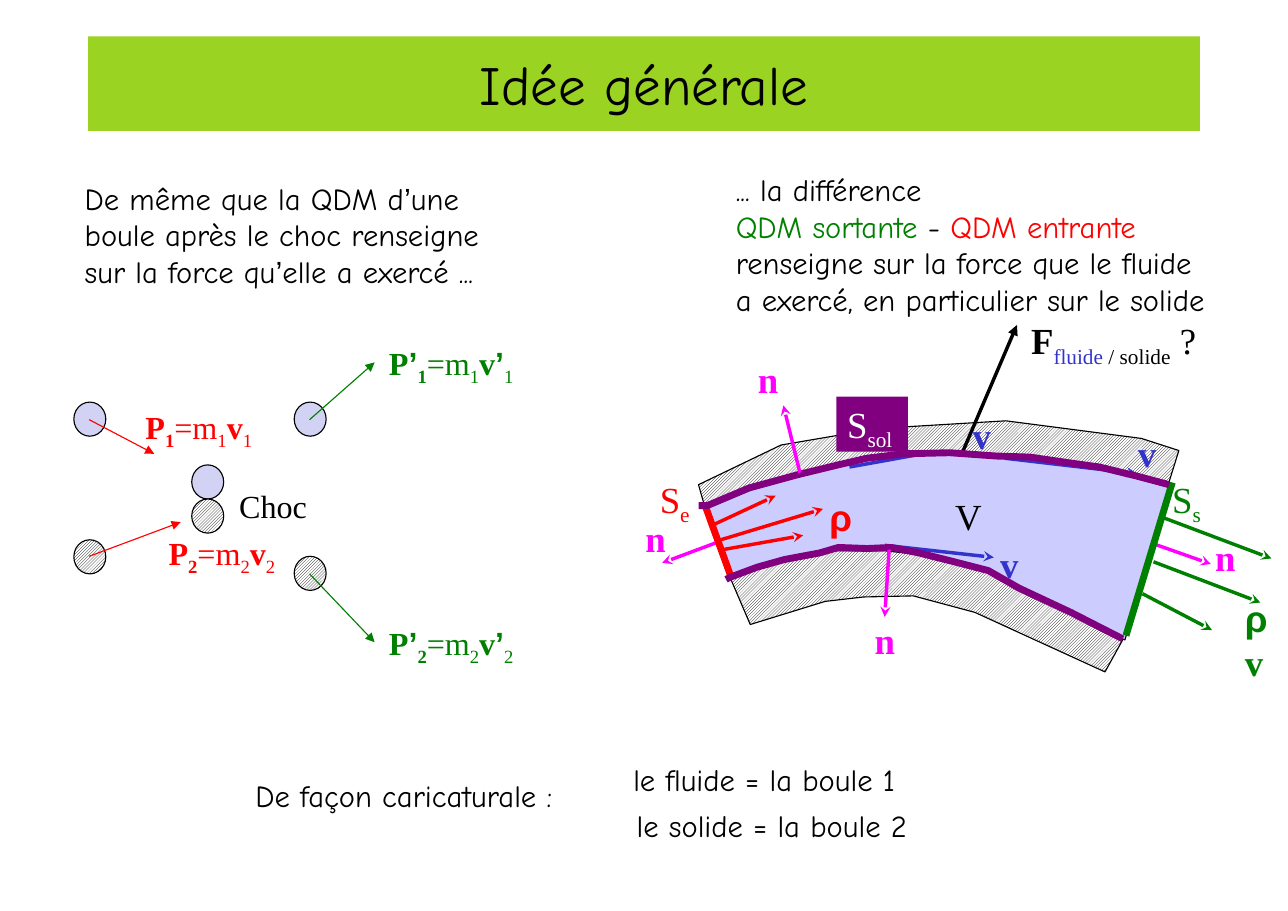
from dataclasses import dataclass

from lxml.etree import SubElement
from pptx import Presentation
from pptx.dml.color import RGBColor as Rgb
from pptx.enum.dml import MSO_PATTERN as Pattern
from pptx.enum.shapes import MSO_CONNECTOR as Connector, MSO_SHAPE as Shape
from pptx.enum.text import MSO_ANCHOR as Anchor, PP_ALIGN as Align
from pptx.oxml.ns import qn
from pptx.util import Inches, Pt

COLUMNS, ROWS = 11.69, 8.27


@dataclass(frozen=True)
class Theme:
    """Colours, fonts and sizes of the slide."""
    banner: str = "9AD322"
    black: str = "000000"
    white: str = "FFFFFF"
    fluid: str = "CCCCFF"
    ball: str = "D2D2F4"
    red: str = "FF0000"
    green: str = "008000"
    blue: str = "3333CC"
    pink: str = "FF00FF"
    purple: str = "800080"
    hand: str = "Comic Neue"
    serif: str = "Times New Roman"
    symbol: str = "Arial"
    title: float = 36
    body: float = 20
    momentum: float = 21
    label: float = 24
    thin: float = 0.75
    medium: float = 2.25
    thick: float = 4.5


THEME = Theme()


@dataclass
class Box:
    """A region of the slide, whose parts are placed in grid cells."""
    shapes: object
    left: float
    top: float

    def point(self, column, row):
        """Turn a cell position in the box into slide lengths."""
        return Inches(self.left + column), Inches(self.top + row)


def paint(shape, fill=None, line=None, weight=THEME.thin):
    """Fill and outline a shape; the fill "hatch" gives diagonal strokes."""
    shape.shadow.inherit = False
    if fill == "hatch":
        shape.fill.patterned()
        shape.fill.pattern = Pattern.LIGHT_UPWARD_DIAGONAL
        shape.fill.fore_color.rgb = Rgb.from_string(THEME.black)
        shape.fill.back_color.rgb = Rgb.from_string(THEME.white)
    elif fill:
        shape.fill.solid()
        shape.fill.fore_color.rgb = Rgb.from_string(fill)
    else:
        shape.fill.background()
    if line:
        shape.line.color.rgb = Rgb.from_string(line)
        shape.line.width = Pt(weight)
    else:
        shape.line.fill.background()


def preset(box, kind, column, row, width, height, fill, line=None):
    """Draw a painted preset shape."""
    shape = box.shapes.add_shape(kind, *box.point(column, row), Inches(width), Inches(height))
    paint(shape, fill, line)
    return shape


def outline(box, points, fill=None, line=THEME.black, weight=THEME.thin):
    """Draw a freeform, closed when it is filled."""
    start, *rest = [box.point(*point) for point in points]
    builder = box.shapes.build_freeform(*start)
    builder.add_line_segments(rest, close=bool(fill))
    paint(builder.convert_to_shape(), fill, line, weight)


def arrow(box, start, end, color, weight=THEME.medium, tip="stealth"):
    """Draw a straight line with an optional tip."""
    line = box.shapes.add_connector(Connector.STRAIGHT, *box.point(*start), *box.point(*end))
    line.line.color.rgb = Rgb.from_string(color)
    line.line.width = Pt(weight)
    if tip:
        SubElement(line.line._get_or_add_ln(), qn("a:tailEnd"), type=tip)
    SubElement(line._element.spPr, qn("a:effectLst"))


def write(frame, paragraphs, size, font, margins=(0.1, 0.05), align=Align.LEFT):
    """Write paragraphs of (text, colour, style) runs; style b is bold, s subscript."""
    frame.word_wrap = True
    frame.vertical_anchor = Anchor.TOP
    frame.margin_left = frame.margin_right = Inches(margins[0])
    frame.margin_top = frame.margin_bottom = Inches(margins[1])
    for index, runs in enumerate(paragraphs):
        para = frame.add_paragraph() if index else frame.paragraphs[0]
        para.alignment = align
        for text, color, style in runs:
            if text == "\n":
                para.add_line_break()
                continue
            span = para.add_run()
            span.text = text
            span.font.size = Pt(size)
            span.font.name = THEME.symbol if text in "’ρ" else font
            span.font.bold = "b" in style
            span.font.color.rgb = Rgb.from_string(color)
            if "s" in style:
                span.font._element.set("baseline", "-25000")


def label(box, column, row, width, runs, size=THEME.label, font=THEME.serif, margins=(0.1, 0.05)):
    """Place a one-paragraph text box."""
    text = box.shapes.add_textbox(*box.point(column, row), Inches(width), Inches(0.5))
    write(text.text_frame, [runs], size, font, margins)


def banner(box):
    """Draw the title band."""
    band = preset(box, Shape.RECTANGLE, 0, 0, 10.09, 0.86, THEME.banner)
    write(band.text_frame, [[("Idée générale", THEME.black, "")]], THEME.title, THEME.hand, (0, 0), Align.CENTER)
    band.text_frame.vertical_anchor = Anchor.MIDDLE


def statement(box, width, height, *paragraphs):
    """Write a handwritten statement, one list of (text, colour) runs per paragraph."""
    text = box.shapes.add_textbox(*box.point(0, 0), Inches(width), Inches(height))
    styled = [[(words, color, "") for words, color in runs] for runs in paragraphs]
    write(text.text_frame, styled, THEME.body, THEME.hand)


def momentum(index, color, prime=False):
    """Give the runs of a momentum formula."""
    mark = [("’", color, "b")] if prime else []
    return [("P", color, "b"), *mark, (index, color, "bs"), ("=m", color, ""), (index, color, "s"),
            ("v", color, "b"), *mark, (index, color, "s")]


def collision(box):
    """Draw the two balls before, during and after the shock."""
    rows = ((THEME.ball, (0.65, 1.22, 0.65)), ("hatch", (1.9, 1.53, 2.05)))
    for fill, tops in rows:
        for column, top in zip((0.67, 1.74, 2.67), tops):
            preset(box, Shape.OVAL, column, top, 0.29, 0.31, fill, THEME.black)
    flights = (((0.81, 0.81), (1.4, 1.12), THEME.red), ((0.81, 2.05), (1.64, 1.74), THEME.red),
               ((2.81, 0.81), (3.4, 0.29), THEME.green), ((2.81, 2.21), (3.4, 2.83), THEME.green))
    for start, end, color in flights:
        arrow(box, start, end, color, THEME.thin, "triangle")
    formulas = ((1.24, 0.66, momentum("1", THEME.red)), (1.45, 1.8, momentum("2", THEME.red)),
                (3.45, 0.08, momentum("1", THEME.green, True)), (3.45, 2.62, momentum("2", THEME.green, True)),
                (2.09, 1.38, [("Choc", THEME.black, "")]))
    for column, row, runs in formulas:
        label(box, column, row, 1.45, runs, THEME.momentum, margins=(0.08, 0.04))


def section(box, edge, normal, speeds, name, name_at, normal_at, flux_at, color):
    """Draw an inlet or outlet section with its normal and velocities."""
    arrow(box, *normal, THEME.pink)
    for speed in speeds:
        arrow(box, *speed, color)
    arrow(box, *edge, color, THEME.thick, None)
    label(box, *normal_at, 0.39, [("n", THEME.pink, "b")])
    label(box, *flux_at, 0.55, [("ρ", color, "b"), ("v", color, "b")])
    label(box, *name_at, 0.5, [("S", color, ""), (name, color, "s")])


def pipe(box):
    """Draw the bent pipe, its walls, sections, velocities and force."""
    outline(box, ((1.39, 2.62), (1.82, 2.43), (2.3, 2.3), (2.85, 2.18), (3.33, 2.11), (3.75, 2.11),
                  (4.48, 2.18), (4.96, 2.24), (5.63, 2.43), (5.21, 3.81), (4.84, 3.63), (4.42, 3.44),
                  (3.94, 3.18), (3.51, 3.06), (3.03, 3), (2.54, 3), (2, 3.12), (1.64, 3.25)), THEME.fluid)
    label(box, 3.57, 2.43, 0.44, [("V", THEME.black, "")])
    section(box, ((5.64, 2.38), (5.22, 3.77)), ((5.45, 2.93), (5.99, 3.12)),
            (((5.47, 3.1), (6.44, 3.47)), ((5.37, 3.39), (6, 3.72)), ((5.56, 2.7), (6.54, 3.07))),
            "s", (5.54, 2.28), (5.93, 2.81), (6.2, 3.36), THEME.green)
    section(box, ((1.4, 2.59), (1.64, 3.25)), ((1.52, 2.92), (1.01, 3.11)),
            (((1.51, 2.91), (2.47, 2.62)), ((1.56, 2.99), (2.29, 2.86)), ((1.44, 2.78), (2.04, 2.5))),
            "e", (0.89, 2.28), (0.76, 2.63), (2.43, 2.44), THEME.red)
    arrow(box, (2.71, 2.24), (3.71, 2.06), THEME.blue)
    outline(box, ((1.4, 2.61), (1.34, 2.4), (2.09, 2.04), (2.97, 1.89), (4.13, 1.82), (5.36, 1.98),
                  (5.7, 2.09), (5.6, 2.41), (5.28, 2.32), (4.71, 2.2), (4.21, 2.14), (3.73, 2.12),
                  (3.47, 2.12), (2.93, 2.16), (2.47, 2.27), (2, 2.38), (1.82, 2.43)), "hatch")
    outline(box, ((1.63, 3.25), (1.86, 3.16), (2.03, 3.11), (2.52, 3), (3.03, 3), (3.3, 3.03), (3.5, 3.06),
                  (3.93, 3.18), (5.19, 3.81), (5.03, 4.1), (4.33, 3.78), (3.85, 3.56), (3.29, 3.41),
                  (2.84, 3.42), (2.49, 3.46), (1.81, 3.67)), "hatch")
    arrow(box, (3.03, 2.95), (4.02, 3.06), THEME.blue)
    arrow(box, (4.12, 2.16), (5.32, 2.3), THEME.blue)
    arrow(box, (3.73, 2.12), (4.23, 0.95), THEME.black, tip="triangle")
    label(box, 4.26, 0.84, 1.88, [("F", THEME.black, "b"), ("fluide", THEME.blue, "s"),
                                  (" / solide", THEME.black, "s"), (" ?", THEME.black, "")])
    for place in ((3.98, 2.87), (5.23, 1.86), (3.73, 1.7)):
        label(box, *place, 0.37, [("v", THEME.blue, "b")])
    walls = (((1.34, 2.59), (1.42, 2.59), (1.8, 2.43), (2.24, 2.31), (2.61, 2.22), (2.87, 2.16), (3.2, 2.12),
              (3.62, 2.11), (4.04, 2.14), (4.35, 2.15), (4.69, 2.2), (4.98, 2.24), (5.31, 2.32), (5.61, 2.4)),
             ((1.59, 3.26), (1.63, 3.24), (1.87, 3.15), (2.12, 3.08), (2.44, 3.02), (2.61, 2.97), (2.87, 2.98),
              (3.09, 2.97), (3.34, 3.02), (3.66, 3.1), (3.97, 3.18), (4.25, 3.34), (4.72, 3.56), (5.19, 3.8)))
    for wall in walls:
        outline(box, wall, line=THEME.purple, weight=THEME.thick)
    for start, end, place in (((3.07, 2.99), (3.03, 3.6), (2.84, 3.56)), ((2.26, 2.29), (2.11, 1.68), (1.78, 1.19))):
        arrow(box, start, end, THEME.pink)
        label(box, *place, 0.39, [("n", THEME.pink, "b")])
    tag = preset(box, Shape.RECTANGLE, 2.59, 1.6, 0.65, 0.5, THEME.purple)
    write(tag.text_frame, [[("S", THEME.white, ""), ("sol", THEME.white, "s")]], THEME.label, THEME.serif)


def main():
    """Build and save the slide."""
    deck = Presentation()
    deck.slide_width, deck.slide_height = Inches(COLUMNS), Inches(ROWS)
    shapes = deck.slides.add_slide(deck.slide_layouts[6]).shapes
    black, end = THEME.black, ("\n", THEME.black)
    banner(Box(shapes, 0.8, 0.33))
    statement(Box(shapes, 0.67, 1.58), 4.17, 1.11,
              [("De même que la QDM d", black), ("’", black), ("une ", black), end,
               ("boule après le choc renseigne ", black), end,
               ("sur la force qu", black), ("’", black), ("elle a exercé ...", black)])
    statement(Box(shapes, 6.58, 1.5), 4.84, 1.45,
              [("... la différence ", black), end, ("QDM sortante ", THEME.green), ("- ", black),
               ("QDM entrante", THEME.red), end, ("renseigne sur la force que le fluide", black)],
              [("a exercé, en particulier sur le solide", black)])
    collision(Box(shapes, 0, 3))
    pipe(Box(shapes, 5, 2))
    conclusions = ((2.22, 7, "De façon caricaturale :"), (5.65, 6.86, "le fluide = la boule 1"),
                   (5.68, 7.28, "le solide = la boule 2"))
    for left, top, words in conclusions:
        statement(Box(shapes, left, top), 3.14, 0.45, [(words, black)])
    deck.save("out.pptx")


if __name__ == "__main__":
    main()
